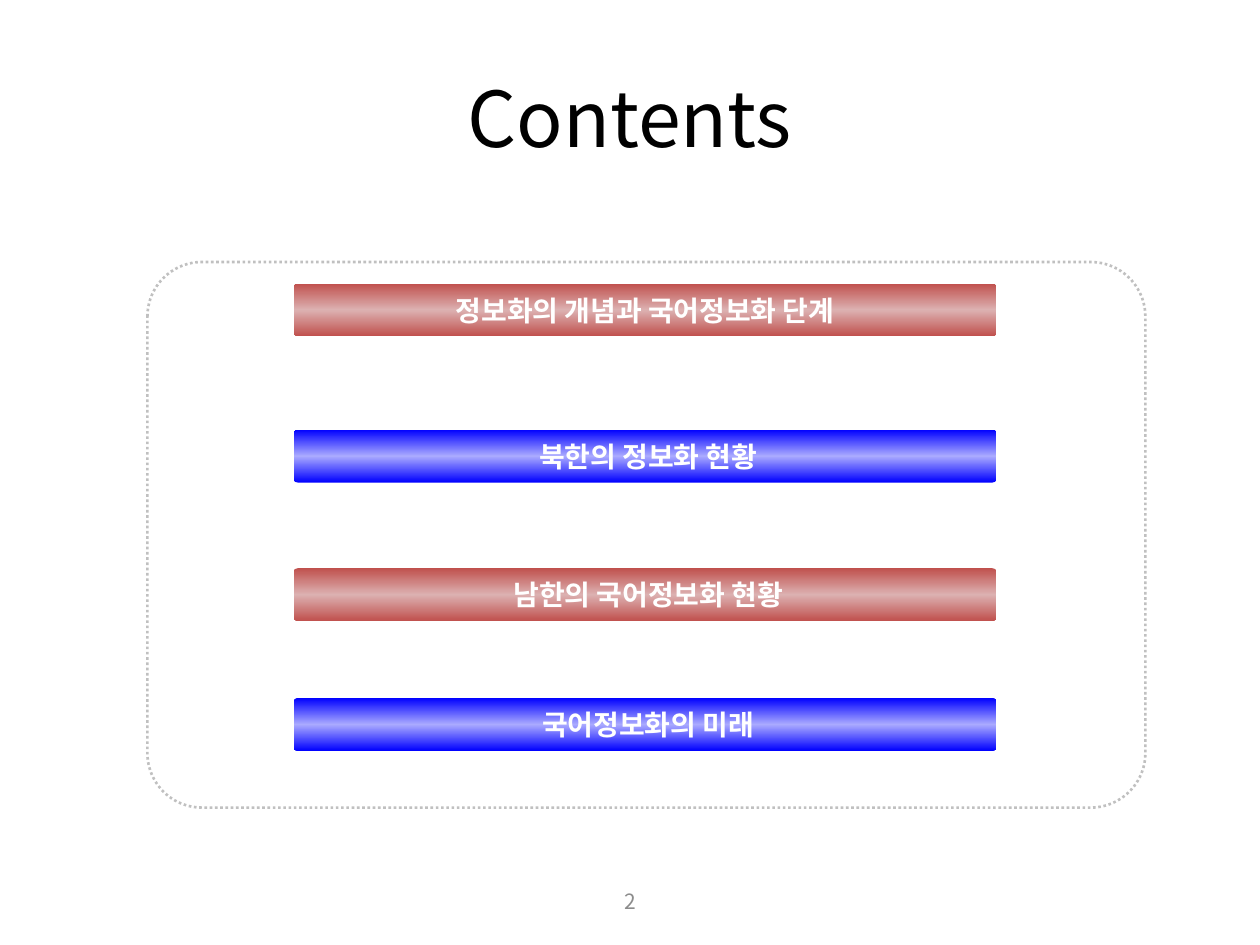
import copy
from dataclasses import dataclass

import pptx
import pptx.dml.color
import pptx.enum.dml
import pptx.enum.shapes
import pptx.enum.text
import pptx.oxml
import pptx.oxml.ns
import pptx.util

Inches = pptx.util.Inches
RGBColor = pptx.dml.color.RGBColor
ROUNDED = pptx.enum.shapes.MSO_SHAPE.ROUNDED_RECTANGLE


@dataclass(frozen=True)
class Theme:
    font: str = "Noto Sans CJK KR"
    title_size: int = 44
    bar_size: int = 16
    number_size: int = 12
    title: str = "000000"
    bar_text: str = "FFFFFF"
    number: str = "8C8C8C"
    frame: str = "C0C0C0"
    red: tuple[str, str] = ("C0504D", "DCB1B1")
    blue: tuple[str, str] = ("0000FF", "AAAAFF")


@dataclass(frozen=True)
class Bar:
    text: str
    top: float
    colors: tuple[str, str]


THEME = Theme()
BARS = (
    Bar("정보화의 개념과 국어정보화 단계", 2.25, THEME.red),
    Bar(" 북한의 정보화 현황", 3.41, THEME.blue),
    Bar(" 남한의 국어정보화 현황", 4.51, THEME.red),
    Bar(" 국어정보화의 미래", 5.54, THEME.blue),
)


def write_text(shape, text: str, size: int, color: str, bold: bool = False, wrap: bool = True) -> None:
    text_frame = shape.text_frame
    text_frame.text = text
    text_frame.word_wrap = wrap
    text_frame.vertical_anchor = pptx.enum.text.MSO_ANCHOR.MIDDLE
    paragraph = text_frame.paragraphs[0]
    paragraph.alignment = pptx.enum.text.PP_ALIGN.CENTER
    font = paragraph.runs[0].font
    font.name = THEME.font
    font.size = pptx.util.Pt(size)
    font.bold = bold
    font.color.rgb = RGBColor.from_string(color)
    # Korean glyphs take the East Asian typeface
    east_asian = pptx.oxml.parse_xml(
        f'<a:ea {pptx.oxml.ns.nsdecls("a")} typeface="{THEME.font}"/>'
    )
    font._element.find(pptx.oxml.ns.qn("a:latin")).addnext(east_asian)


def fill_with_band(shape, edge: str, middle: str) -> None:
    """Fill with a vertical gradient that runs edge, middle, edge."""
    fill = shape.fill
    fill.gradient()
    fill.gradient_angle = 270
    stop_list = shape._element.spPr.find(".//" + pptx.oxml.ns.qn("a:gsLst"))
    stop_list.append(copy.deepcopy(stop_list[0]))
    for stop, position, color in zip(fill.gradient_stops, (0, 0.5, 1), (edge, middle, edge)):
        stop.position = position
        stop.color.rgb = RGBColor.from_string(color)


def add_rounded(slide, left: float, top: float, width: float, height: float, rounding: float):
    shape = slide.shapes.add_shape(ROUNDED, Inches(left), Inches(top), Inches(width), Inches(height))
    shape.adjustments[0] = rounding
    shape.shadow.inherit = False
    return shape


def add_frame(slide) -> None:
    frame = add_rounded(slide, 1.17, 2.08, 7.92, 4.33, 0.1)
    frame.fill.background()
    frame.line.color.rgb = RGBColor.from_string(THEME.frame)
    frame.line.width = pptx.util.Pt(1.5)
    # ROUND_DOT is stored as sysDot
    frame.line.dash_style = pptx.enum.dml.MSO_LINE.ROUND_DOT


def add_bar(slide, bar: Bar) -> None:
    shape = add_rounded(slide, 2.33, bar.top, 5.58, 0.42, 0.08)
    fill_with_band(shape, *bar.colors)
    shape.line.fill.background()
    write_text(shape, bar.text, THEME.bar_size, THEME.bar_text, bold=True, wrap=False)


def main() -> None:
    presentation = pptx.Presentation()
    presentation.slide_width = Inches(10)
    presentation.slide_height = Inches(7.5)
    slide = presentation.slides.add_slide(presentation.slide_layouts[6])

    title = slide.shapes.add_textbox(Inches(0.5), Inches(0.3), Inches(9), Inches(1.25))
    write_text(title, "Contents", THEME.title_size, THEME.title)
    add_frame(slide)
    for bar in BARS:
        add_bar(slide, bar)
    number = slide.shapes.add_textbox(Inches(3.42), Inches(6.95), Inches(3.17), Inches(0.4))
    write_text(number, "2", THEME.number_size, THEME.number)

    presentation.save("out.pptx")


if __name__ == "__main__":
    main()
